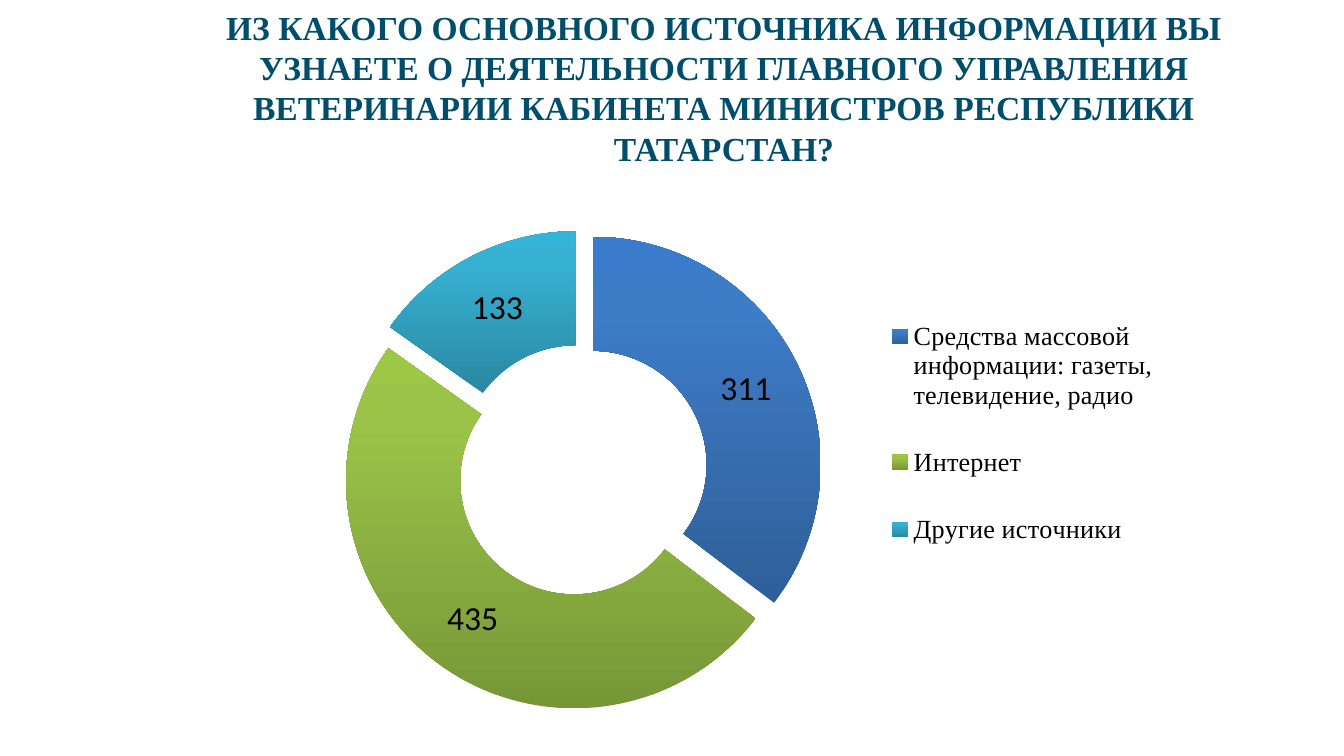
from copy import deepcopy

from lxml.etree import SubElement
from pptx import Presentation
from pptx.chart.data import CategoryChartData
from pptx.dml.color import RGBColor
from pptx.enum.chart import XL_CHART_TYPE as ChartType, XL_LEGEND_POSITION as LegendPosition
from pptx.enum.text import MSO_ANCHOR, MSO_AUTO_SIZE, PP_ALIGN
from pptx.oxml import parse_xml
from pptx.oxml.ns import nsdecls, qn
from pptx.util import Emu, Pt

TITLE = ("ИЗ КАКОГО ОСНОВНОГО ИСТОЧНИКА ИНФОРМАЦИИ ВЫ УЗНАЕТЕ О ДЕЯТЕЛЬНОСТИ "
         "ГЛАВНОГО УПРАВЛЕНИЯ ВЕТЕРИНАРИИ КАБИНЕТА МИНИСТРОВ РЕСПУБЛИКИ ТАТАРСТАН?")

# category, share in percent, number of answers, gradient from bottom to top
SOURCES = [
    ("Средства массовой информации: газеты, телевидение, радио", 35, "311",
     (RGBColor(0x2F, 0x5F, 0x99), RGBColor(0x3D, 0x7C, 0xC7), RGBColor(0x3A, 0x7C, 0xCB))),
    ("Интернет", 49, "435",
     (RGBColor(0x77, 0x97, 0x37), RGBColor(0x9B, 0xC3, 0x48), RGBColor(0x9D, 0xC7, 0x46))),
    ("Другие источники", 15, "133",
     (RGBColor(0x2A, 0x88, 0xA2), RGBColor(0x37, 0xB1, 0xD2), RGBColor(0x34, 0xB4, 0xD6))),
]
STOP_POSITIONS = (0, 0.8, 1)
EXPLOSION = 11

TITLE_COLOR = RGBColor(0x00, 0x4E, 0x6C)
BLACK = RGBColor(0, 0, 0)
SERIF, SANS = "Times New Roman", "Calibri"

PAGE_SIZE = (1344, 756)
TITLE_BOX = (153, 0, 1142, 150)
CHART_BOX = (238, 134, 945, 637)
PLOT_AREA = (103, 96, 481, 481)  # px inside the chart
LEGEND_AREA = (638, 150, 293, 298)


def px(value):
    return Emu(round(value * 914400 / 134.4))


def set_font(font, name, size, color, bold=False):
    font.name, font.size, font.bold = name, Pt(size), bold
    font.color.rgb = color


def place(parent, index, area, inner=False):
    """Give a chart part a manual layout, as its child at index."""
    for old in parent.findall(qn("c:layout")):
        parent.remove(old)
    layout = parse_xml(f"<c:layout {nsdecls('c')}><c:manualLayout/></c:layout>")
    manual = layout[0]
    if inner:
        SubElement(manual, qn("c:layoutTarget")).set("val", "inner")
    for tag in ("xMode", "yMode"):
        SubElement(manual, qn(f"c:{tag}")).set("val", "edge")
    for tag, length, whole in zip("xywh", area, CHART_BOX[2:] * 2):
        SubElement(manual, qn(f"c:{tag}")).set("val", f"{length / whole:.4f}")
    parent.insert(index, layout)


def fill_gradient(fill, colors):
    fill.gradient()
    fill.gradient_angle = 90
    first = fill.gradient_stops[0]._gs
    first.addnext(deepcopy(first))
    for stop, color, position in zip(fill.gradient_stops, colors, STOP_POSITIONS):
        stop.color.rgb = color
        stop.position = position


def add_title(page):
    title = page.shapes.title
    title.left, title.top, title.width, title.height = map(px, TITLE_BOX)
    frame = title.text_frame
    frame.text = TITLE
    frame.word_wrap = True
    frame.auto_size = MSO_AUTO_SIZE.NONE
    frame.vertical_anchor = MSO_ANCHOR.TOP
    para = frame.paragraphs[0]
    para.alignment = PP_ALIGN.CENTER
    set_font(para.font, SERIF, 18, TITLE_COLOR, bold=True)


def add_doughnut(page):
    data = CategoryChartData()
    data.categories = [source[0] for source in SOURCES]
    data.add_series("Series 1", [source[1] for source in SOURCES])
    chart = page.shapes.add_chart(ChartType.DOUGHNUT, *map(px, CHART_BOX), data).chart
    chart.has_title = False
    set_font(chart.font, SANS, 18, BLACK)

    chart.has_legend = True
    legend = chart.legend
    legend.position = LegendPosition.RIGHT
    legend.include_in_layout = False
    set_font(legend.font, SERIF, 14, BLACK)
    place(legend._element, 1, LEGEND_AREA)
    place(chart._chartSpace.chart.plotArea, 0, PLOT_AREA, inner=True)

    plot = chart.plots[0]
    plot.vary_by_categories = True
    series = plot.series[0]
    explosion = parse_xml(f'<c:explosion {nsdecls("c")} val="{EXPLOSION}"/>')
    series._element.find(qn("c:tx")).addnext(explosion)

    labels = series.data_labels
    labels.show_value = False
    labels.show_percentage = True
    set_font(labels.font, SANS, 18, BLACK)
    for index, (_, _, answers, colors) in enumerate(SOURCES):
        point = series.points[index]
        fill_gradient(point.format.fill, colors)
        point.format.line.fill.background()
        frame = point.data_label.text_frame
        frame.text = answers
        set_font(frame.paragraphs[0].font, SANS, 18, BLACK)


def main():
    deck = Presentation()
    deck.slide_width, deck.slide_height = map(px, PAGE_SIZE)
    page = deck.slides.add_slide(deck.slide_layouts[5])
    add_doughnut(page)
    add_title(page)
    deck.save("out.pptx")


if __name__ == "__main__":
    main()
